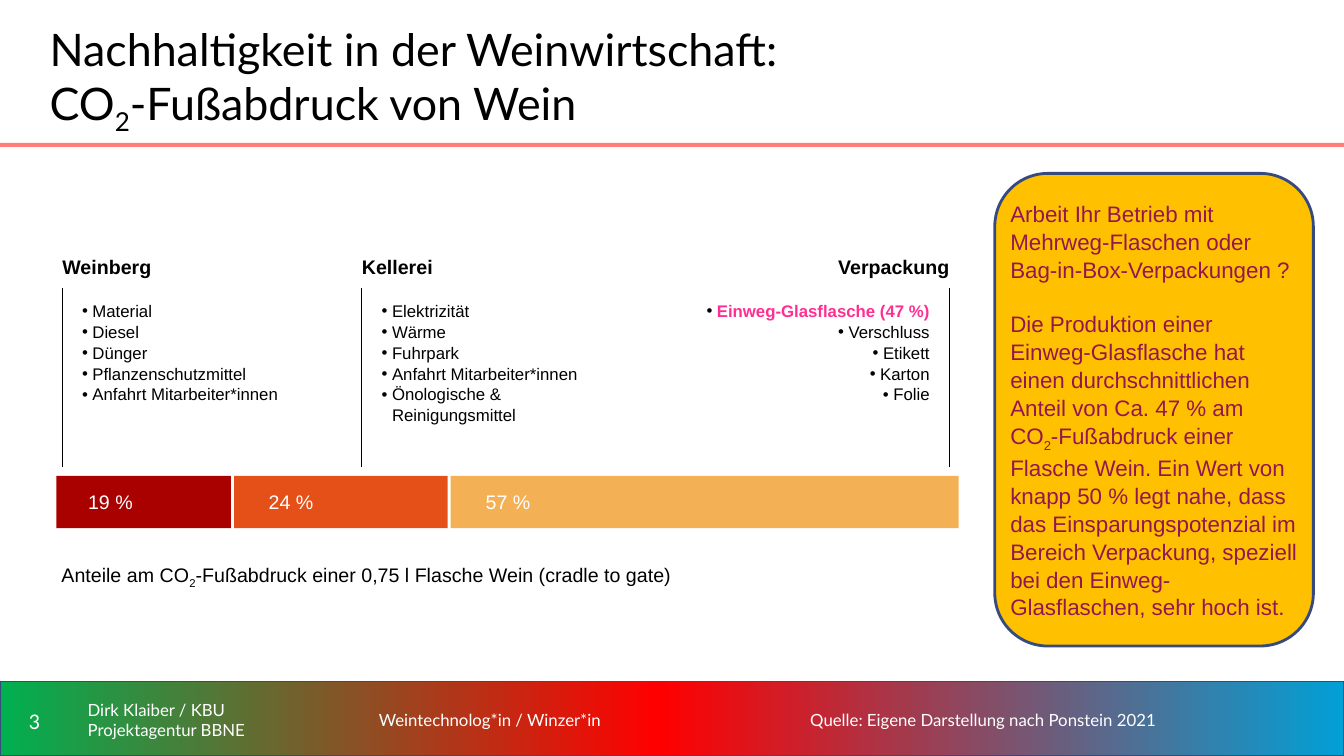
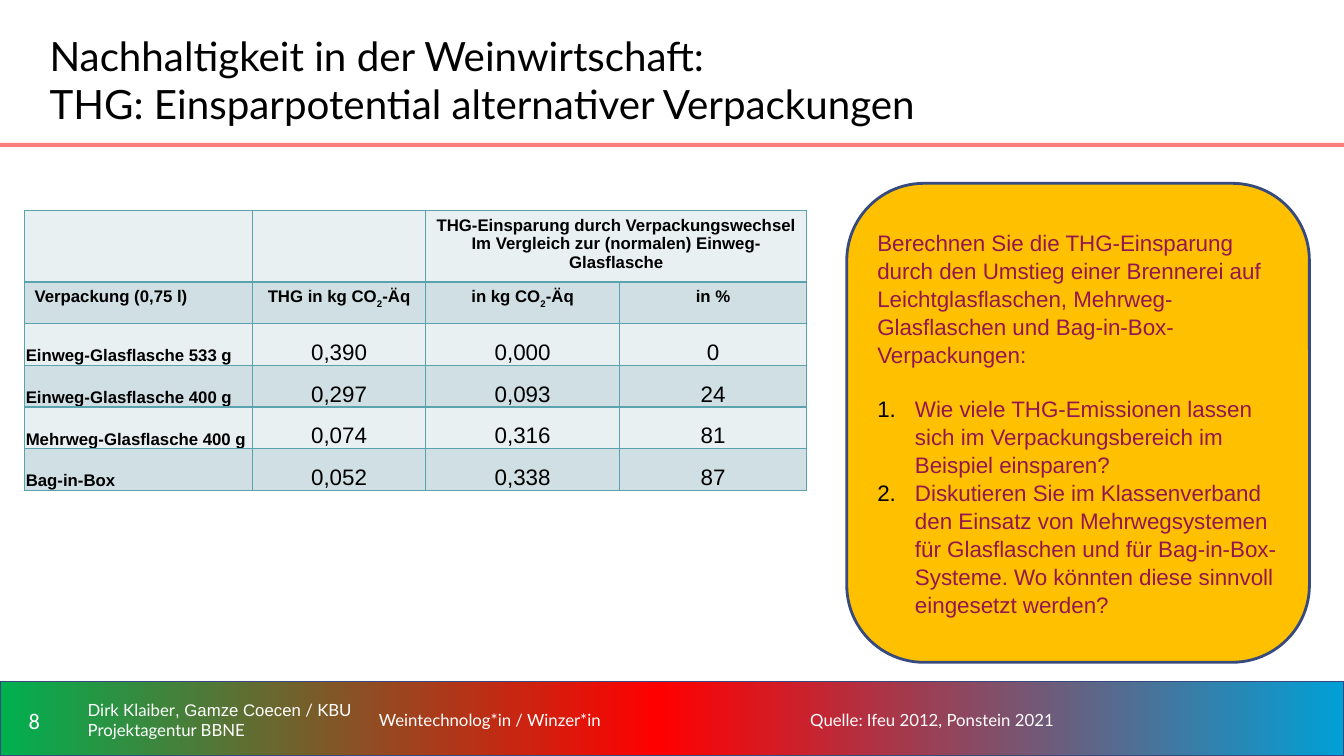
from dataclasses import dataclass, replace

from lxml import etree
from pptx import Presentation
from pptx import util as u
from pptx.dml.color import RGBColor
from pptx.enum import shapes, text
from pptx.oxml.ns import qn

BLACK, WHITE, PINK, PLUM = "000000", "FFFFFF", "FF2F92", "941651"
NAVY, CORAL, AMBER = "364A7D", "FF7E79", "FFC000"
BAND_STOPS = [(0, "00B050"), (49, "FF0000"), (100, "01A0D6")]
BAR_COLORS = ["A90000", "E55019", "F4B054"]
TABLE_FILLS, TABLE_BORDER = ["E9F0F1", "D0DFE3"], "5AA2AE"

SLIDE_WIDTH, SLIDE_HEIGHT = 33.87, 19.05
FOOTER_TOP, FOOTER_HEIGHT = 17.37, 1.55
BOX_INSETS = (0.25, 0.13, 0.25, 0.13)
LEFT, CENTER, RIGHT = text.PP_ALIGN.LEFT, text.PP_ALIGN.CENTER, text.PP_ALIGN.RIGHT
TOP, MIDDLE, BOTTOM = text.MSO_ANCHOR.TOP, text.MSO_ANCHOR.MIDDLE, text.MSO_ANCHOR.BOTTOM


@dataclass(frozen=True)
class Style:
    size: float
    color: str = BLACK
    font: str = "Arial"
    bold: bool = False


TITLE = Style(32, font="Lato")
FOOTER = Style(12, WHITE, "Lato")
HEADING = Style(14, bold=True)
BODY = Style(12)
TASK = Style(16, PLUM)


def rgb(color):
    return RGBColor.from_string(color)


def add_run(paragraph, content, style, subscript=False):
    run = paragraph.add_run()
    run.text = content
    font = run.font
    font.size, font.name, font.bold = u.Pt(style.size), style.font, style.bold
    font.color.rgb = rgb(style.color)
    if subscript:
        font._element.set("baseline", "-25000")


def add_rich_text(paragraph, content, style):
    """Append text in which the 2 of every CO2 is a subscript."""
    for index, piece in enumerate(content.split("CO2")):
        if index:
            add_run(paragraph, "CO", style)
            add_run(paragraph, "2", style, subscript=True)
        if piece:
            add_run(paragraph, piece, style)


def write(frame, lines, style, align=LEFT, line_spacing=None):
    """Fill a frame; a line is a string or a list of (text, style) pieces."""
    for index, line in enumerate(lines):
        paragraph = frame.add_paragraph() if index else frame.paragraphs[0]
        paragraph.alignment = align
        if line_spacing:
            paragraph.line_spacing = line_spacing
        for content, piece_style in [(line, style)] if isinstance(line, str) else line:
            add_rich_text(paragraph, content, piece_style)


def set_frame(frame, insets, anchor):
    frame.word_wrap = True
    frame.vertical_anchor = anchor
    (frame.margin_left, frame.margin_top,
     frame.margin_right, frame.margin_bottom) = [u.Cm(inset) for inset in insets]


def add_text(slide, left, top, width, height, lines, style, align=LEFT, anchor=TOP):
    box = slide.shapes.add_textbox(u.Cm(left), u.Cm(top), u.Cm(width), u.Cm(height))
    set_frame(box.text_frame, BOX_INSETS, anchor)
    write(box.text_frame, lines, style, align)
    return box.text_frame


def add_block(slide, left, top, width, height, fill=None, line=None, line_width=1,
              kind=shapes.MSO_SHAPE.RECTANGLE):
    block = slide.shapes.add_shape(kind, u.Cm(left), u.Cm(top), u.Cm(width), u.Cm(height))
    block.shadow.inherit = False
    if fill:
        block.fill.solid()
        block.fill.fore_color.rgb = rgb(fill)
    if line:
        block.line.color.rgb = rgb(line)
        block.line.width = u.Pt(line_width)
    else:
        block.line.fill.background()
    return block


def add_vertical_line(slide, x, top, bottom):
    line = slide.shapes.add_connector(
        shapes.MSO_CONNECTOR.STRAIGHT, u.Cm(x), u.Cm(top), u.Cm(x), u.Cm(bottom))
    line.line.color.rgb = rgb(BLACK)
    line.line.width = u.Pt(0.75)
    etree.SubElement(line._element.spPr, qn("a:effectLst"))


def set_hanging(paragraph, indent, marker=None, **marker_attributes):
    """Indent a paragraph and, given a marker element, hang a black marker before it."""
    properties = paragraph._p.get_or_add_pPr()
    properties.set("marL", str(u.Cm(indent)))
    properties.set("indent", str(-u.Cm(indent) if marker else 0))
    if marker:
        color = etree.SubElement(properties, qn("a:buClr"))
        etree.SubElement(color, qn("a:srgbClr"), val=BLACK)
        etree.SubElement(properties, qn("a:buFont"), typeface="Arial")
        etree.SubElement(properties, qn(marker), **marker_attributes)


def set_gradient(shape, stops):
    shape.fill.gradient()
    shape.fill.gradient_angle = 0
    stop_list = shape._element.spPr.find(".//" + qn("a:gsLst"))
    for stop in list(stop_list):
        stop_list.remove(stop)
    for position, color in stops:
        stop = etree.SubElement(stop_list, qn("a:gs"), pos=str(position * 1000))
        etree.SubElement(stop, qn("a:srgbClr"), val=color)


def add_base_slide(presentation, number, title, title_style, authors, source):
    """Add a slide with title, rule and footer band."""
    slide = presentation.slides.add_slide(presentation.slide_layouts[6])
    band_top = 17.17
    band = add_block(slide, 0, band_top, SLIDE_WIDTH, SLIDE_HEIGHT - band_top, line=NAVY)
    set_gradient(band, BAND_STOPS)
    add_block(slide, 0, 3.6, SLIDE_WIDTH, 0.1, CORAL)
    add_text(slide, 1, 0.5, 25, 3, title, title_style, anchor=MIDDLE)
    number_style = Style(16, WHITE, "Calibri")
    for left, width, lines, style, align in [
            (0, 1.73, [number], number_style, CENTER),
            (1.96, 7.3, authors, FOOTER, LEFT),
            (9.3, 10.64, ["Weintechnolog*in / Winzer*in"], FOOTER, LEFT),
            (20.17, 12.83, [source], FOOTER, LEFT)]:
        add_text(slide, left, FOOTER_TOP, width, FOOTER_HEIGHT, lines, style, align, MIDDLE)
    return slide


def add_task_box(slide, left, top, width, height, lines, side_inset):
    """Add the rounded box, with a gap after its first paragraph."""
    box = add_block(slide, left, top, width, height, AMBER, NAVY, 2,
                    shapes.MSO_SHAPE.ROUNDED_RECTANGLE)
    set_frame(box.text_frame, (side_inset, 0, side_inset, 0), MIDDLE)
    write(box.text_frame, lines, TASK, line_spacing=1.04)
    box.text_frame.paragraphs[1].space_before = u.Pt(19)
    return box.text_frame


def add_stage(slide, line_x, heading, items, align=LEFT):
    """Add a heading and a bullet list beside a vertical line."""
    heading_width, list_width, offset, indent = 6, 6.3, 0.25, 0.26
    heading_left, list_left = line_x - offset, line_x + offset
    if align == RIGHT:
        heading_left = line_x + offset - heading_width
        list_left = line_x - offset - list_width
    add_text(slide, heading_left, 6.3, heading_width, 0.86, [heading], HEADING, align)
    add_vertical_line(slide, line_x, 7.26, 11.76)
    frame = add_text(slide, list_left, 7.42, list_width, 3.3, items, BODY, align)
    for paragraph in frame.paragraphs:
        paragraph.line_spacing = 1.04
        if paragraph.text == "Reinigungsmittel":
            set_hanging(paragraph, indent)
        else:
            set_hanging(paragraph, indent, "a:buChar", char="•")


def add_share_bar(slide):
    left, gap = 1.42, 0.08
    segments = [("19 %", 4.4, 0.8), ("24 %", 5.38, 0.87), ("57 %", 12.8, 0.88)]
    for (label, width, inset), color in zip(segments, BAR_COLORS):
        segment = add_block(slide, left, 11.99, width, 1.32, color)
        set_frame(segment.text_frame, (inset, 0, 0, 0), MIDDLE)
        write(segment.text_frame, [label], Style(14, WHITE))
        left += width + gap


def style_cell(cell, fill, insets, anchor):
    properties = cell._tc.get_or_add_tcPr()
    for side in ("L", "R", "T", "B"):
        border = etree.SubElement(properties, qn("a:ln" + side), w=str(u.Pt(1)))
        solid = etree.SubElement(border, qn("a:solidFill"))
        etree.SubElement(solid, qn("a:srgbClr"), val=TABLE_BORDER)
    cell.fill.solid()
    cell.fill.fore_color.rgb = rgb(fill)
    (cell.margin_left, cell.margin_top,
     cell.margin_right, cell.margin_bottom) = [u.Cm(inset) for inset in insets]
    cell.vertical_anchor = anchor


def add_savings_table(slide):
    savings_heading = ["THG-Einsparung durch Verpackungswechsel",
                       "Im Vergleich zur (normalen) Einweg-Glasflasche"]
    rows = [
        ["", "", savings_heading, ""],
        ["Verpackung (0,75 l)", "THG in kg CO2-Äq", "in kg CO2-Äq", "in %"],
        ["Einweg-Glasflasche 533 g", "0,390", "0,000", "0"],
        ["Einweg-Glasflasche 400 g", "0,297", "0,093", "24"],
        ["Mehrweg-Glasflasche 400 g", "0,074", "0,316", "81"],
        ["Bag-in-Box", "0,052", "0,338", "87"],
    ]
    widths, heights = [5.74, 4.37, 4.88, 4.72], [1.72] + [1.05] * 5
    table = slide.shapes.add_table(
        len(rows), len(widths), u.Cm(0.62), u.Cm(5.3),
        u.Cm(sum(widths)), u.Cm(sum(heights))).table
    table.first_row = table.horz_banding = False
    for column, width in zip(table.columns, widths):
        column.width = u.Cm(width)
    for row, height in zip(table.rows, heights):
        row.height = u.Cm(height)
    for row_index, row in enumerate(rows):
        is_header = row_index < 2
        insets = (0.25, 0.14, 0.25, 0.14) if is_header else (0.03, 0.03, 0.03, 0)
        for column_index, content in enumerate(row):
            cell = table.cell(row_index, column_index)
            style_cell(cell, TABLE_FILLS[row_index % 2], insets, TOP if is_header else BOTTOM)
            is_label = is_header or column_index == 0
            style = replace(BODY, bold=True) if is_label else Style(16)
            align = LEFT if column_index == 0 else CENTER
            if content:
                lines = [content] if isinstance(content, str) else content
                write(cell.text_frame, lines, style, align)
    table.cell(0, 2).merge(table.cell(0, 3))


def add_footprint_slide(presentation):
    slide = add_base_slide(
        presentation, "3",
        ["Nachhaltigkeit in der Weinwirtschaft:", "CO2-Fußabdruck von Wein"], TITLE,
        ["Dirk Klaiber / KBU", "Projektagentur BBNE"],
        "Quelle: Eigene Darstellung nach Ponstein 2021")
    add_task_box(slide, 25.07, 4.37, 8.03, 11.91, [
        "Arbeit Ihr Betrieb mit Mehrweg-Flaschen oder Bag-in-Box-Verpackungen ?",
        "Die Produktion einer Einweg-Glasflasche hat einen durchschnittlichen Anteil von "
        "Ca. 47 % am CO2-Fußabdruck einer Flasche Wein. Ein Wert von knapp 50 % legt nahe, "
        "dass das Einsparungspotenzial im Bereich Verpackung, speziell bei den "
        "Einweg-Glasflaschen, sehr hoch ist."], 0)
    add_stage(slide, 1.57, "Weinberg", [
        "Material", "Diesel", "Dünger", "Pflanzenschutzmittel", "Anfahrt Mitarbeiter*innen"])
    add_stage(slide, 9.12, "Kellerei", [
        "Elektrizität", "Wärme", "Fuhrpark", "Anfahrt Mitarbeiter*innen",
        "Önologische &", "Reinigungsmittel"])
    highlight = replace(BODY, color=PINK, bold=True)
    add_stage(slide, 23.93, "Verpackung", [
        [("Einweg-Glasflasche (47 %)", highlight)],
        "Verschluss", "Etikett", "Karton", "Folie"], RIGHT)
    add_share_bar(slide)
    add_text(slide, 1.3, 14.05, 22.58, 0.86,
             ["Anteile am CO2-Fußabdruck einer 0,75 l Flasche Wein (cradle to gate)"], Style(14))


def add_savings_slide(presentation):
    slide = add_base_slide(
        presentation, "8",
        ["Nachhaltigkeit in der Weinwirtschaft:",
         "THG: Einsparpotential alternativer Verpackungen"], replace(TITLE, size=28.8),
        [[("Dirk Klaiber", FOOTER), (", Gamze Coecen", replace(FOOTER, font="Arial")),
          (" / KBU", FOOTER)], "Projektagentur BBNE"],
        "Quelle: Ifeu 2012, Ponstein 2021")
    add_savings_table(slide)
    frame = add_task_box(slide, 21.34, 4.62, 11.66, 12.07, [
        "Berechnen Sie die THG-Einsparung durch den Umstieg einer Brennerei auf "
        "Leichtglasflaschen, Mehrweg-Glasflaschen und Bag-in-Box-Verpackungen:",
        "Wie viele THG-Emissionen lassen sich im Verpackungsbereich im Beispiel einsparen?",
        "Diskutieren Sie im Klassenverband den Einsatz von Mehrwegsystemen für Glasflaschen "
        "und für Bag-in-Box-Systeme. Wo könnten diese sinnvoll eingesetzt werden?"], 0.2)
    for paragraph in frame.paragraphs[1:]:
        set_hanging(paragraph, 0.95, "a:buAutoNum", type="arabicPeriod")


def main():
    presentation = Presentation()
    presentation.slide_width, presentation.slide_height = u.Cm(SLIDE_WIDTH), u.Cm(SLIDE_HEIGHT)
    add_footprint_slide(presentation)
    add_savings_slide(presentation)
    presentation.save("out.pptx")


if __name__ == "__main__":
    main()
